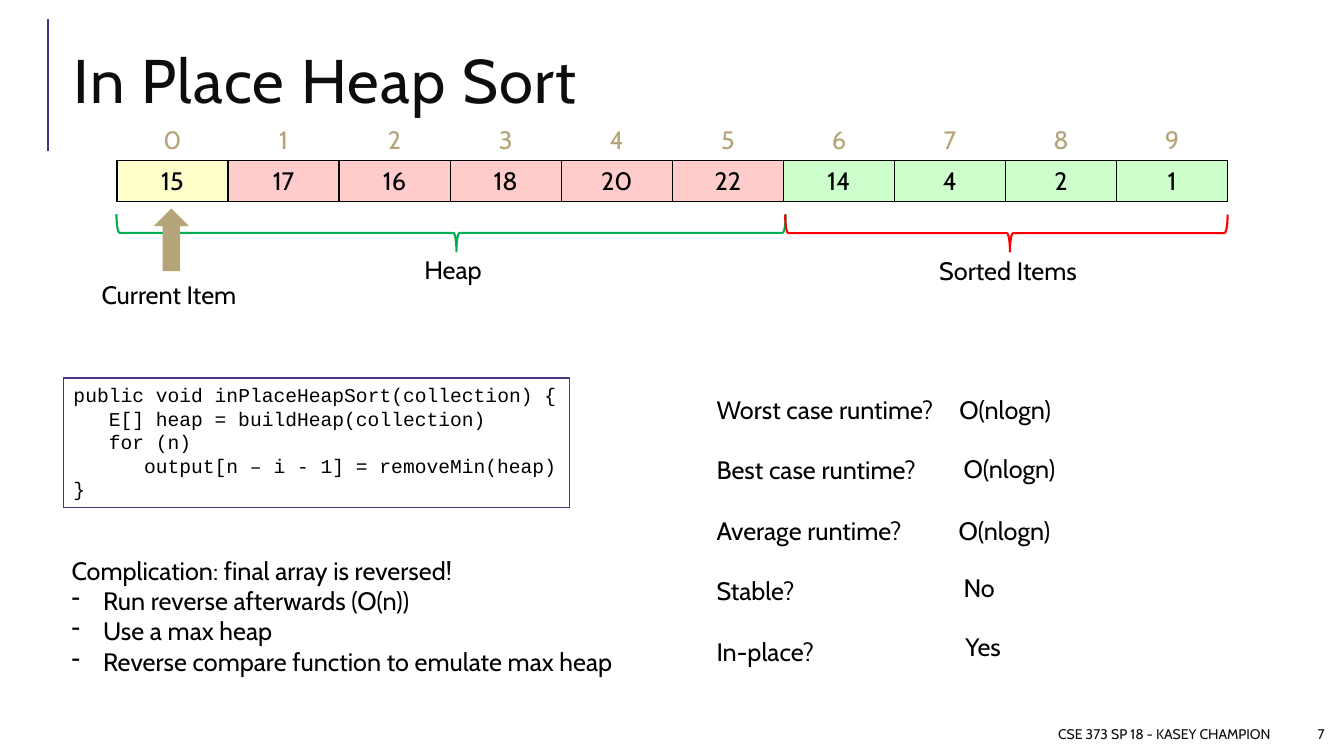
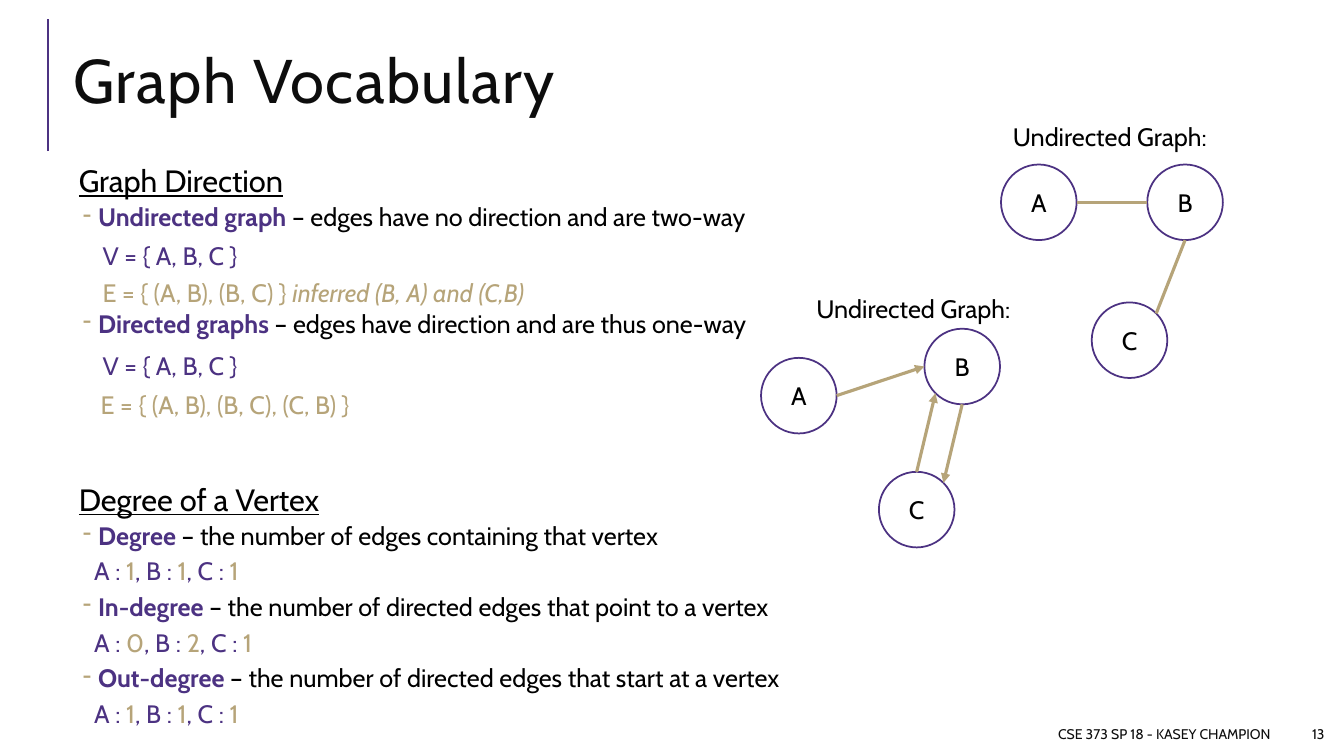
from math import cos, radians, sin

from lxml import etree
from pptx import Presentation
from pptx.dml.color import RGBColor
from pptx.enum.shapes import MSO_CONNECTOR, MSO_SHAPE
from pptx.enum.text import MSO_ANCHOR, MSO_AUTO_SIZE, PP_ALIGN
from pptx.oxml.ns import qn
from pptx.util import Pt

STRAIGHT = MSO_CONNECTOR.STRAIGHT
OVAL, BRACE, UP_ARROW = MSO_SHAPE.OVAL, MSO_SHAPE.LEFT_BRACE, MSO_SHAPE.UP_ARROW
TOP, MIDDLE = MSO_ANCHOR.TOP, MSO_ANCHOR.MIDDLE
GROW = MSO_AUTO_SIZE.SHAPE_TO_FIT_TEXT
LEFT, CENTER, RIGHT = PP_ALIGN.LEFT, PP_ALIGN.CENTER, PP_ALIGN.RIGHT

COLORS = {
    "ink": "000000", "title": "0D0D0D", "purple": "4C3282", "gold": "B6A479",
    "white": "FFFFFF", "yellow": "FFFFCC", "pink": "FFCCCC", "mint": "CCFFCC",
    "green": "00B050", "red": "FF0000",
}
FONT, CODE_FONT = "Cabin", "Courier New"
FOOTER = "CSE 373 SP 18 - KASEY CHAMPION"
LABEL_H = 29
NODE = 54


def rgb(name):
    return RGBColor.from_string(COLORS[name])


class Deck:
    def __init__(self):
        self.prs = Presentation()
        self.prs.slide_width, self.prs.slide_height = Pt(960), Pt(540)
        self.s = None

    def slide(self, title, number):
        self.s = self.prs.slides.add_slide(self.prs.slide_layouts[6])
        self.line((34, 108), (34, 13.7), "purple", 1.5)
        tf = self.box(45.5, 21, 880.5, 80, wrap=True, anchor=MIDDLE)
        p = self.para(tf, [(title, {"size": 44, "color": "title"})], spacing=0.8)
        p.runs[0].font._element.set("spc", "100")
        for x, w, text in ((450, 464.5, FOOTER), (920, 33.2, str(number))):
            tf = self.box(x, 513.4, w, 21.6, wrap=True, anchor=MIDDLE)
            self.para(tf, [(text, {"size": 10, "color": "title"})], align=RIGHT)

    def box(self, x, y, w, h, wrap=False, anchor=TOP, inset=None, line=None):
        sp = self.s.shapes.add_textbox(Pt(x), Pt(y), Pt(w), Pt(h))
        if line:
            sp.line.color.rgb = rgb(line)
            sp.line.width = Pt(0.75)
        tf = sp.text_frame
        tf.word_wrap = wrap
        tf.vertical_anchor = anchor
        if not wrap:
            tf.auto_size = GROW
        if inset is not None:
            self.inset(tf, inset)
        return tf

    def inset(self, tf, size):
        tf.margin_left = tf.margin_top = tf.margin_right = tf.margin_bottom = Pt(size)

    def run(self, p, text, size=18, color="ink", font=FONT, bold=False,
            italic=False, underline=False):
        r = p.add_run()
        r.text = text
        f = r.font
        f.size, f.name, f.color.rgb = Pt(size), font, rgb(color)
        f.bold, f.italic, f.underline = bold, italic, underline

    def para(self, tf, runs, align=LEFT, spacing=None, before=0, after=0,
             margin=0, hang=0, bullet_color=None):
        p = tf.paragraphs[0]
        if p.runs:
            p = tf.add_paragraph()
        p.alignment = align
        p.space_before, p.space_after = Pt(before), Pt(after)
        if spacing:
            p.line_spacing = spacing
        pPr = p._p.get_or_add_pPr()
        pPr.set("marL", str(Pt(margin)))
        pPr.set("indent", str(-Pt(hang)))
        if hang:
            if bullet_color:
                clr = etree.SubElement(pPr, qn("a:buClr"))
                etree.SubElement(clr, qn("a:srgbClr"), val=COLORS[bullet_color])
            etree.SubElement(pPr, qn("a:buChar"), char="-")
        for text, style in runs:
            self.run(p, text, **style)
        return p

    def label(self, x, y, w, *runs):
        self.para(self.box(x, y, w, LABEL_H), runs)

    def line(self, start, end, color, width, arrow=False, into=None):
        shapes = (into or self.s).shapes
        c = shapes.add_connector(STRAIGHT, *[Pt(v) for v in (*start, *end)])
        c.line.color.rgb = rgb(color)
        c.line.width = Pt(width)
        if arrow:
            etree.SubElement(c.line._get_or_add_ln(), qn("a:tailEnd"), type="triangle")
        etree.SubElement(c._element.spPr, qn("a:effectLst"))

    def shape(self, kind, x, y, w, h, fill=None, line=None, width=1, into=None):
        shapes = (into or self.s).shapes
        sp = shapes.add_shape(kind, Pt(x), Pt(y), Pt(w), Pt(h))
        sp.shadow.inherit = False
        if fill:
            sp.fill.solid()
            sp.fill.fore_color.rgb = rgb(fill)
        else:
            sp.fill.background()
        if line:
            sp.line.color.rgb = rgb(line)
            sp.line.width = Pt(width)
        else:
            sp.line.fill.background()
        return sp

    def brace(self, x, y, span, color):
        depth = 26.6
        sp = self.shape(BRACE, x + (span - depth) / 2, y + (depth - span) / 2,
                        depth, span, line=color, width=1.5)
        sp.rotation = 270
        sp.adjustments[0], sp.adjustments[1] = 0.083, 0.508

    def graph(self, nodes, edges, arrow=False):
        group = self.s.shapes.add_group_shape()
        for name, (x, y) in nodes.items():
            sp = self.shape(OVAL, x, y, NODE, NODE, line="purple", width=1.25, into=group)
            tf = sp.text_frame
            tf.word_wrap = False
            tf.vertical_anchor = MIDDLE
            self.inset(tf, 0)
            self.para(tf, [(name, {})], align=CENTER)

        def rim(name, angle):
            x, y = nodes[name]
            a, half = radians(angle), NODE / 2
            return x + half + half * cos(a), y + half + half * sin(a)

        for start, end in edges:
            self.line(rim(*start), rim(*end), "gold", 2.25, arrow, group)

    def array(self, x, y, col_w, row_h, values, fills):
        n = len(values)
        t = self.s.shapes.add_table(2, n, Pt(x), Pt(y), Pt(col_w * n), Pt(row_h * 2)).table
        t.first_row = t.horz_banding = False
        for row in t.rows:
            row.height = Pt(row_h)
        for i, (value, fill) in enumerate(zip(values, fills)):
            t.columns[i].width = Pt(col_w)
            self.cell(t.cell(0, i), i, "gold", None, "white")
            self.cell(t.cell(1, i), value, "ink", fill, "ink")

    def cell(self, cell, value, color, fill, border):
        cell.vertical_anchor = MIDDLE
        self.para(cell.text_frame, [(str(value), {"color": color})], align=CENTER)
        tcPr = cell._tc.get_or_add_tcPr()
        for side in ("lnL", "lnR", "lnT", "lnB"):
            ln = etree.SubElement(tcPr, qn("a:" + side), w=str(Pt(1)))
            solid = etree.SubElement(ln, qn("a:solidFill"))
            tone = "ink" if side == "lnB" else border
            etree.SubElement(solid, qn("a:srgbClr"), val=COLORS[tone])
        if fill:
            cell.fill.solid()
            cell.fill.fore_color.rgb = rgb(fill)
        else:
            cell.fill.background()


def heap_sort(d):
    d.slide("In Place Heap Sort", 7)

    code = d.box(45.4, 270, 361.5, 92.2, line="purple")
    for level, text in (
        (0, "public void inPlaceHeapSort(collection) {"),
        (1, "E[] heap = buildHeap(collection)"),
        (1, "for (n)"),
        (2, "output[n – i - 1] = removeMin(heap)"),
        (0, "}"),
    ):
        d.para(code, [(text, {"size": 14, "font": CODE_FONT})], margin=25.2 * level)

    questions = d.box(504.7, 278, 173.5, 203.8)
    for i, text in enumerate(("Worst case runtime?", "Best case runtime?",
                              "Average runtime?", "Stable?", "In-place?")):
        d.para(questions, [(text, {})], before=21.6 if i else 0)
    for x, y, w, text in (
        (678.2, 278, 83.5, "O(nlogn)"),
        (681.2, 320.5, 83.5, "O(nlogn)"),
        (677.6, 364.4, 83.5, "O(nlogn)"),
        (681.2, 405.4, 38.2, "No"),
        (682.5, 447.2, 39.6, "Yes"),
    ):
        d.label(x, y, w, (text, {}))

    d.array(83.5, 85.7, 79.35, 29.2, [15, 17, 16, 18, 20, 22, 14, 4, 2, 1],
            ["yellow"] + ["pink"] * 5 + ["mint"] * 4)
    d.brace(83.2, 153, 478, "green")
    d.brace(560.9, 153.2, 316, "red")
    d.label(296, 177.8, 56.2, ("Heap", {}))
    d.label(663.8, 178.6, 113.8, ("Sorted Items", {}))
    d.label(65.5, 195.8, 113, ("Current Item", {}))
    d.shape(UP_ARROW, 109.8, 149, 25.2, 44.6, fill="gold")

    notes = d.box(44, 393.1, 409, 94.3)
    d.para(notes, [("Complication: final array is reversed!", {})])
    for text in ("Run reverse afterwards (O(n))", "Use a max heap",
                 "Reverse compare function to emulate max heap"):
        d.para(notes, [(text, {})], margin=22.5, hang=22.5)


def graph_vocabulary(d):
    d.slide("Graph Vocabulary", 13)
    purple, gold = {"color": "purple"}, {"color": "gold"}
    body = d.box(45.5, 115.2, 880.5, 419.8, wrap=True, inset=3.6)

    def heading(text, before=12):
        d.para(body, [(text, {"size": 22, "underline": True})], spacing=0.9,
               before=before, after=2, margin=7.2)

    def term(name, meaning, before=2):
        d.para(body, [(name, {"color": "purple", "bold": True}), (meaning, {})],
               spacing=0.9, before=before, after=4, margin=21, hang=10.8,
               bullet_color="gold")

    heading("Graph Direction")
    term("Undirected graph", " – edges have no direction and are two-way")
    term("Directed graphs ", "– edges have direction and are thus one-way", before=52.6)
    heading("Degree of a Vertex", before=100.2)
    for name, meaning, degrees in (
        ("Degree", " – the number of edges containing that vertex", "111"),
        ("In-degree", " – the number of directed edges that point to a vertex", "021"),
        ("Out-degree", " – the number of directed edges that start at a vertex", "111"),
    ):
        term(name, meaning)
        runs = []
        for lead, degree in zip(("A : ", ", B : ", ", C : "), degrees):
            runs += [(lead, purple), (degree, gold)]
        d.para(body, runs, spacing=0.9, before=2, after=4, margin=18.2)

    vertices = ("V = { A, B, C }", purple)
    d.label(66.2, 167.8, 119.5, vertices)
    d.label(66.2, 194.6, 343.4, ("E = { (A, B), (B, C) } ", gold),
            ("inferred (B, A) and (C,B)", {"color": "gold", "italic": True}))
    d.label(66.2, 247, 119.5, vertices)
    d.label(64.8, 274.4, 207.4, ("E = { (A, B), (B, C), (C, B) }", gold))

    d.graph({"A": (715, 117.5), "B": (819.5, 117.5), "C": (779.8, 216)},
            [(("A", 0), ("B", 180)), (("B", 90), ("C", -45))])
    d.graph({"A": (543.6, 255.6), "B": (660.3, 234.8), "C": (627.8, 337)},
            [(("A", 0), ("B", 180)), (("B", 90), ("C", -45)), (("C", -90), ("B", 135))],
            arrow=True)
    for x, y in ((716.4, 82.8), (576, 206)):
        d.label(x, y, 157, ("Undirected Graph:", {}))


def main():
    d = Deck()
    heap_sort(d)
    graph_vocabulary(d)
    d.prs.save("out.pptx")


if __name__ == "__main__":
    main()
